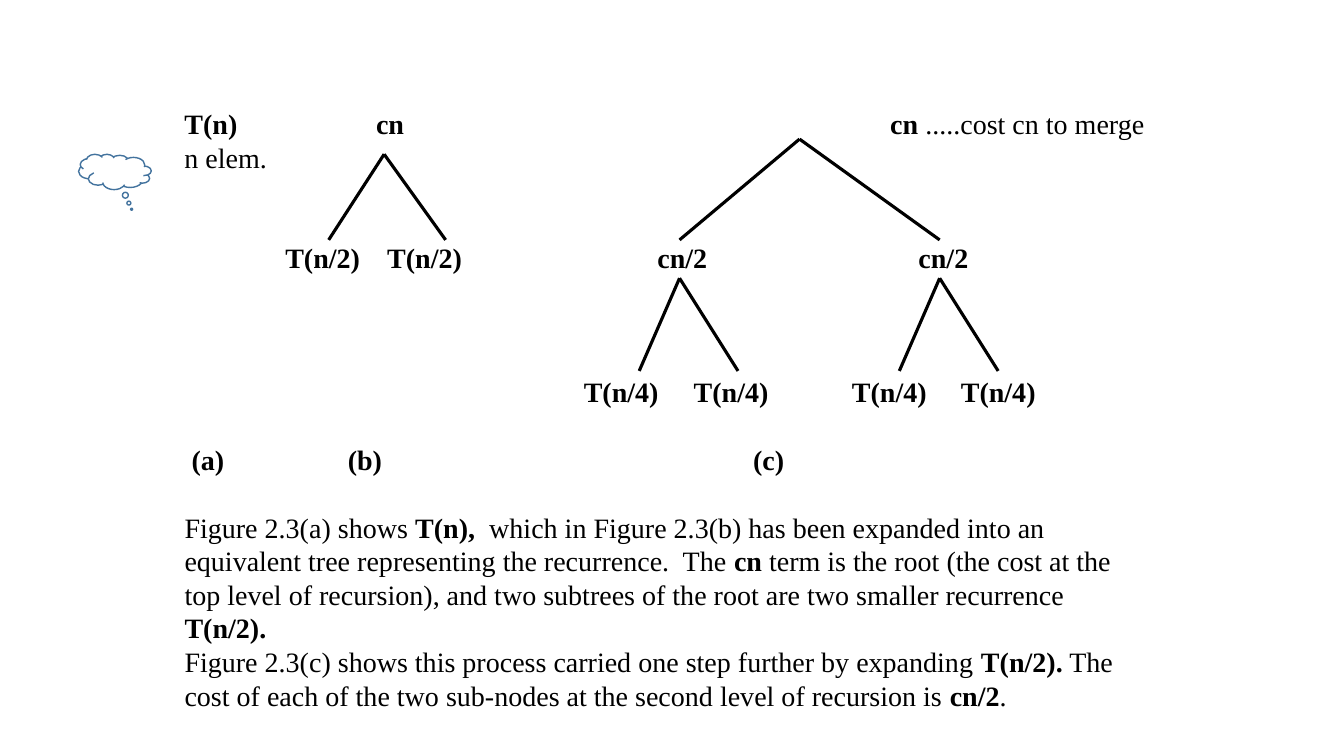
from lxml.etree import SubElement
from pptx import Presentation
from pptx.dml.color import RGBColor
from pptx.enum.shapes import MSO_CONNECTOR, MSO_SHAPE
from pptx.enum.text import MSO_ANCHOR, MSO_AUTO_SIZE
from pptx.oxml.ns import qn
from pptx.util import Pt

EMU_PER_PX = 9144
FONT = "Times New Roman"
BLACK = "000000"
CLOUD_BLUE = "43739E"
TEXT_LEFT = 183
LINE_HEIGHT = 24

# Tops of the text rows
ROOT_ROW, ELEMENT_ROW, HALF_ROW, QUARTER_ROW, CAPTION_ROW, BODY_ROW = (
    106, 139, 239, 372, 439, 506)

LABELS = [
    (ROOT_ROW, [(TEXT_LEFT, "T(n)"), (373, "cn")]),
    (HALF_ROW, [(283, "T(n/2)"), (384, "T(n/2)"), (652, "cn/2"), (911, "cn/2")]),
    (QUARTER_ROW, [(579, "T(n/4)"), (688, "T(n/4)"),
                   (845, "T(n/4)"), (953, "T(n/4)")]),
    (CAPTION_ROW, [(190, "(a)"), (345, "(b)"), (747, "(c)")]),
]

# Apex x, apex y, left foot x, right foot x, foot y
BRANCHES = [
    (381, 153, 326, 442, 238),
    (793, 138, 674, 932, 238),
    (674, 276, 634, 732, 368),
    (932, 276, 892, 990, 368),
]

# Each paragraph is a list of (text, bold) runs
EXPLANATION = [
    [("Figure 2.3(a) shows ", False), ("T(n),", True),
     ("  which in Figure 2.3(b) has been expanded into an equivalent tree "
      "representing the recurrence.  The ", False),
     ("cn", True),
     (" term is the root (the cost at the top level of recursion), and two "
      "subtrees of the root are two smaller recurrence  ", False),
     ("T(n/2).", True)],
    [("Figure 2.3(c) shows this process carried one step further by expanding ",
      False),
     ("T(n/2).", True),
     (" The cost of each of the two sub-nodes at the second level of recursion is ",
      False),
     ("cn/2", True), (".", False)],
]


def px(length):
    return length * EMU_PER_PX


def color(hex_string):
    return RGBColor.from_string(hex_string)


def prepare_frame(text_frame):
    text_frame.word_wrap = True
    text_frame.auto_size = MSO_AUTO_SIZE.NONE
    text_frame.vertical_anchor = MSO_ANCHOR.TOP
    text_frame.margin_left = text_frame.margin_right = 0
    text_frame.margin_top = text_frame.margin_bottom = 0


def fill_paragraph(paragraph, runs):
    paragraph.line_spacing = Pt(LINE_HEIGHT)
    paragraph.space_before = paragraph.space_after = Pt(0)
    for text, bold in runs:
        run = paragraph.add_run()
        run.text = text
        run.font.name = FONT
        run.font.size = Pt(20)
        run.font.bold = bold
        run.font.color.rgb = color(BLACK)


def add_label(slide, left, top, runs, width=100):
    box = slide.shapes.add_textbox(px(left), px(top), px(width), px(33))
    prepare_frame(box.text_frame)
    fill_paragraph(box.text_frame.paragraphs[0], runs)


def add_branch(slide, apex_x, apex_y, left_x, right_x, foot_y):
    for foot_x in (left_x, right_x):
        line = slide.shapes.add_connector(
            MSO_CONNECTOR.STRAIGHT, px(apex_x), px(apex_y), px(foot_x), px(foot_y))
        line.line.color.rgb = color(BLACK)
        line.line.width = Pt(2.25)
        SubElement(line._element.spPr, qn("a:effectLst"))


def add_thought_cloud(slide):
    cloud = slide.shapes.add_shape(
        MSO_SHAPE.CLOUD_CALLOUT, px(78), px(153), px(72), px(35))
    cloud.adjustments[0] = -0.23
    cloud.adjustments[1] = 1.06
    cloud._element.spPr.xfrm.set("flipH", "1")
    cloud.shadow.inherit = False
    cloud.fill.background()
    cloud.line.color.rgb = color(CLOUD_BLUE)
    cloud.line.width = Pt(1)


def fill_body(body, paragraphs):
    body.left, body.top = px(TEXT_LEFT), px(BODY_ROW)
    body.width, body.height = px(960), px(205)
    text_frame = body.text_frame
    prepare_frame(text_frame)
    for index, runs in enumerate(paragraphs):
        paragraph = text_frame.add_paragraph() if index else text_frame.paragraphs[0]
        fill_paragraph(paragraph, runs)
        properties = paragraph._p.get_or_add_pPr()
        properties.set("marL", "0")
        properties.set("indent", "0")
        SubElement(properties, qn("a:buNone"))


def main():
    presentation = Presentation()
    presentation.slide_width, presentation.slide_height = px(1333), px(750)
    slide = presentation.slides.add_slide(presentation.slide_layouts[1])
    title = slide.shapes.title._element
    title.getparent().remove(title)

    fill_body(slide.placeholders[1], EXPLANATION)
    for top, labels in LABELS:
        for left, text in labels:
            add_label(slide, left, top, [(text, True)])
    add_label(slide, 883, ROOT_ROW,
              [("cn ", True), (".....cost cn to merge", False)], width=270)
    add_label(slide, TEXT_LEFT, ELEMENT_ROW, [("n elem.", False)])
    for branch in BRANCHES:
        add_branch(slide, *branch)
    add_thought_cloud(slide)
    presentation.save("out.pptx")


if __name__ == "__main__":
    main()
